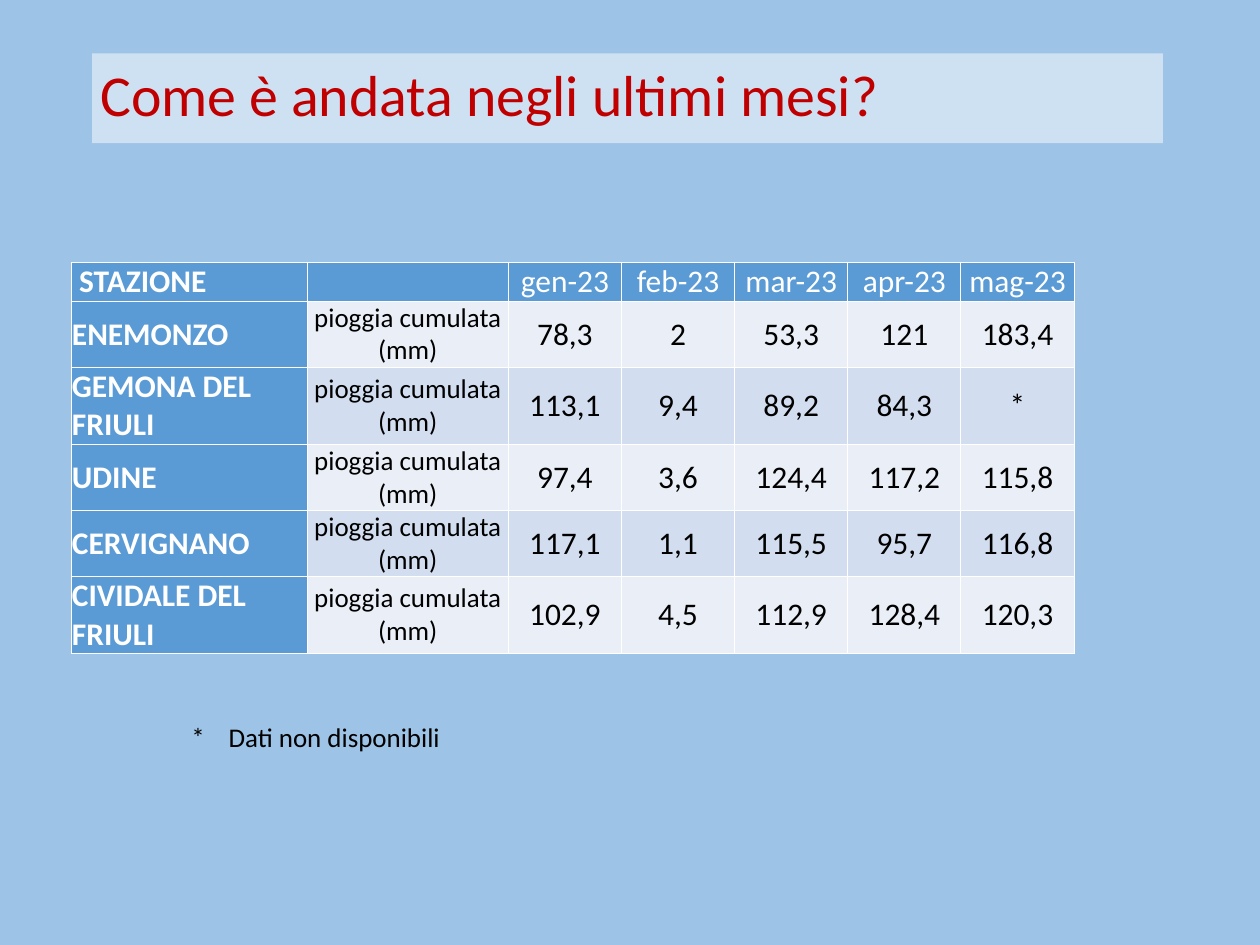
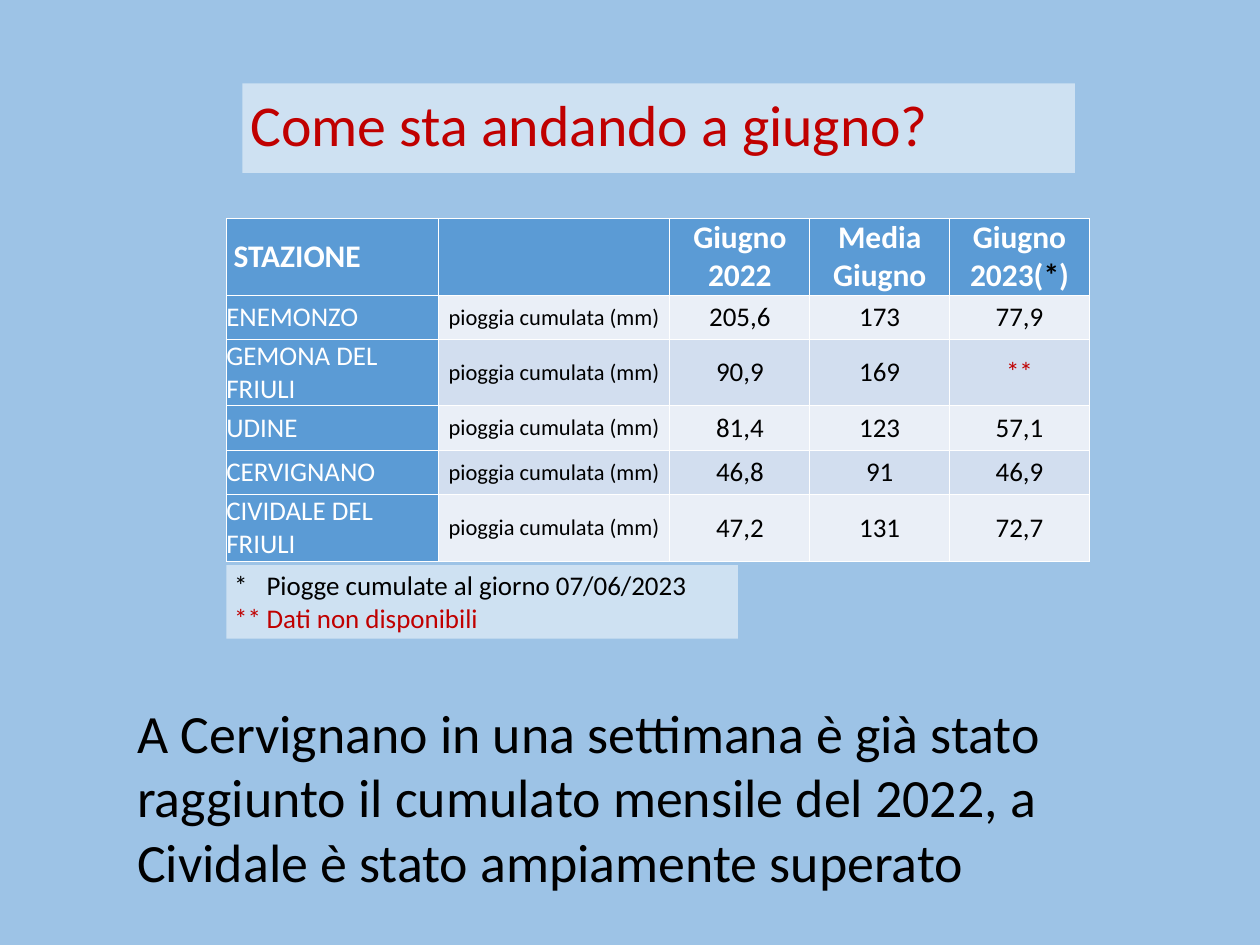
from lxml import etree
from pptx import Presentation
from pptx.dml.color import RGBColor
from pptx.enum.text import MSO_ANCHOR, MSO_AUTO_SIZE, PP_ALIGN
from pptx.oxml.ns import qn
from pptx.util import Inches, Pt

LEFT, CENTER = PP_ALIGN.LEFT, PP_ALIGN.CENTER
MIDDLE = MSO_ANCHOR.MIDDLE
NO_AUTOFIT = MSO_AUTO_SIZE.NONE

FONT = "Calibri"
SKY, HEADER_BLUE = "9DC3E6", "5B9BD5"
BANDS = ("EAEFF7", "D2DEEF")
WHITE, BLACK, RED = "FFFFFF", "000000", "C00000"

STATIONS = ("ENEMONZO", "GEMONA DEL FRIULI", "UDINE", "CERVIGNANO", "CIVIDALE DEL FRIULI")
MEASURE = "pioggia cumulata (mm)"


def rgb(color):
    return RGBColor.from_string(color)


def fill_solid(fill, color):
    fill.solid()
    fill.fore_color.rgb = rgb(color)


def fill_panel(shape):
    """Give a shape the half-transparent white used behind text."""
    fill_solid(shape.fill, WHITE)
    color = shape.element.spPr.find(".//" + qn("a:srgbClr"))
    etree.SubElement(color, qn("a:alpha"), val="50000")


def add_run(paragraph, text, size, color=BLACK, bold=False):
    run = paragraph.add_run()
    run.text = text
    formats = {"name": FONT, "size": Pt(size), "bold": bold}
    for attribute, value in formats.items():
        setattr(run.font, attribute, value)
    run.font.color.rgb = rgb(color)


def add_tab_stop(paragraph, position):
    stops = etree.SubElement(paragraph._p.get_or_add_pPr(), qn("a:tabLst"))
    etree.SubElement(stops, qn("a:tab"), pos=str(Inches(position)), algn="l")


def add_titled_slide(prs, text, left, top, width, height=1.11):
    slide = prs.slides.add_slide(prs.slide_layouts.get_by_name("Title Only"))
    title = slide.shapes.title
    title.left, title.top = Inches(left), Inches(top)
    title.width, title.height = Inches(width), Inches(height)
    fill_panel(title)
    frame = title.text_frame
    frame.auto_size = NO_AUTOFIT
    frame.vertical_anchor = MIDDLE
    paragraph = frame.paragraphs[0]
    paragraph.alignment = LEFT
    paragraph.line_spacing = 0.9
    add_run(paragraph, text, 51.5, RED)
    return slide


def add_text(slide, box, lines, size, tab=None, panel=False):
    """Add a text box; lines are (text, color) pairs."""
    shape = slide.shapes.add_textbox(*map(Inches, box))
    if panel:
        fill_panel(shape)
    frame = shape.text_frame
    frame.word_wrap = True
    for index, (text, color) in enumerate(lines):
        paragraph = frame.add_paragraph() if index else frame.paragraphs[0]
        if tab:
            add_tab_stop(paragraph, tab)
        add_run(paragraph, text, size, color)


def set_borders(cell):
    properties = cell._tc.get_or_add_tcPr()
    for index, side in enumerate(("lnL", "lnR", "lnT", "lnB")):
        line = etree.Element(qn("a:" + side), w=str(Pt(1)))
        solid = etree.SubElement(line, qn("a:solidFill"))
        etree.SubElement(solid, qn("a:srgbClr"), val=WHITE)
        properties.insert(index, line)


def write_cell(cell, content, fill, size, color=BLACK, bold=False, align=CENTER, indent=0):
    """Format a cell; content is a text or a list of (text, color) runs."""
    margins = {"margin_left": indent, "margin_right": 0, "margin_top": 0, "margin_bottom": 0}
    for attribute, value in margins.items():
        setattr(cell, attribute, Inches(value))
    cell.vertical_anchor = MIDDLE
    fill_solid(cell.fill, fill)
    set_borders(cell)
    paragraph = cell.text_frame.paragraphs[0]
    paragraph.alignment = align
    runs = [(content, color)] if isinstance(content, str) else content
    for text, run_color in runs:
        if text:
            add_run(paragraph, text, size, run_color, bold)


def add_rain_table(slide, left, top, widths, heights, periods, rainfall,
                   size, measure_size, bold_periods, bold_stations):
    frame = slide.shapes.add_table(len(heights), len(widths), Inches(left), Inches(top),
                                   Inches(sum(widths)), Inches(sum(heights)))
    table = frame.table
    table.horz_banding = False
    for column, width in zip(table.columns, widths):
        column.width = Inches(width)
    for row, height in zip(table.rows, heights):
        row.height = Inches(height)

    write_cell(table.cell(0, 0), "STAZIONE", HEADER_BLUE, 28, WHITE, True, LEFT, 0.09)
    for column, period in enumerate(("", *periods), 1):
        write_cell(table.cell(0, column), period, HEADER_BLUE, 28, WHITE, bold_periods)
    for row, (station, values) in enumerate(zip(STATIONS, rainfall), 1):
        band = BANDS[(row - 1) % 2]
        write_cell(table.cell(row, 0), station, HEADER_BLUE, size, WHITE, bold_stations, LEFT)
        write_cell(table.cell(row, 1), MEASURE, band, measure_size)
        for column, value in enumerate(values, 2):
            write_cell(table.cell(row, column), value, band, size)


def add_recent_months(prs):
    slide = add_titled_slide(prs, "Come è andata negli ultimi mesi?", 1.14, 0.66, 13.25)
    add_rain_table(
        slide, 0.89, 3.25,
        widths=[2.91, 2.49] + [1.4] * 5,
        heights=[0.47, 0.82, 0.95, 0.82, 0.82, 0.95],
        periods=("gen-23", "feb-23", "mar-23", "apr-23", "mag-23"),
        rainfall=(
            ("78,3", "2", "53,3", "121", "183,4"),
            ("113,1", "9,4", "89,2", "84,3", "*"),
            ("97,4", "3,6", "124,4", "117,2", "115,8"),
            ("117,1", "1,1", "115,5", "95,7", "116,8"),
            ("102,9", "4,5", "112,9", "128,4", "120,3"),
        ),
        size=28, measure_size=24, bold_periods=False, bold_stations=True)
    add_text(slide, (2.27, 8.86, 7.63, 0.5), [("*\tDati non disponibili", BLACK)], 24, tab=0.46)


def add_june(prs):
    slide = add_titled_slide(prs, "Come sta andando a giugno?", 3, 1.03, 10.3)
    add_rain_table(
        slide, 2.8, 2.7,
        widths=[2.62, 2.87] + [1.73] * 3,
        heights=[0.95, 0.55, 0.82, 0.55, 0.55, 0.82],
        periods=("Giugno 2022", "Media Giugno",
                 [("Giugno 2023(", WHITE), ("*", BLACK), (")", WHITE)]),
        rainfall=(
            ("205,6", "173", "77,9"),
            ("90,9", "169", [("**", RED)]),
            ("81,4", "123", "57,1"),
            ("46,8", "91", "46,9"),
            ("47,2", "131", "72,7"),
        ),
        size=24, measure_size=20, bold_periods=True, bold_stations=False)
    add_text(slide, (2.8, 6.99, 6.33, 0.91),
             [("*\tPiogge cumulate al giorno 07/06/2023", BLACK),
              ("**\tDati non disponibili", RED)], 24, tab=0.4, panel=True)
    add_text(slide, (1.6, 8.6, 13.4, 2.52),
             [("A Cervignano in una settimana è già stato raggiunto il cumulato mensile "
               "del 2022, a Cividale è stato ampiamente superato", BLACK)], 48)


def main():
    prs = Presentation()
    prs.slide_width, prs.slide_height = Inches(15.59), Inches(11.69)
    fill_solid(prs.slide_master.background.fill, SKY)
    add_recent_months(prs)
    add_june(prs)
    prs.save("out.pptx")


if __name__ == "__main__":
    main()
